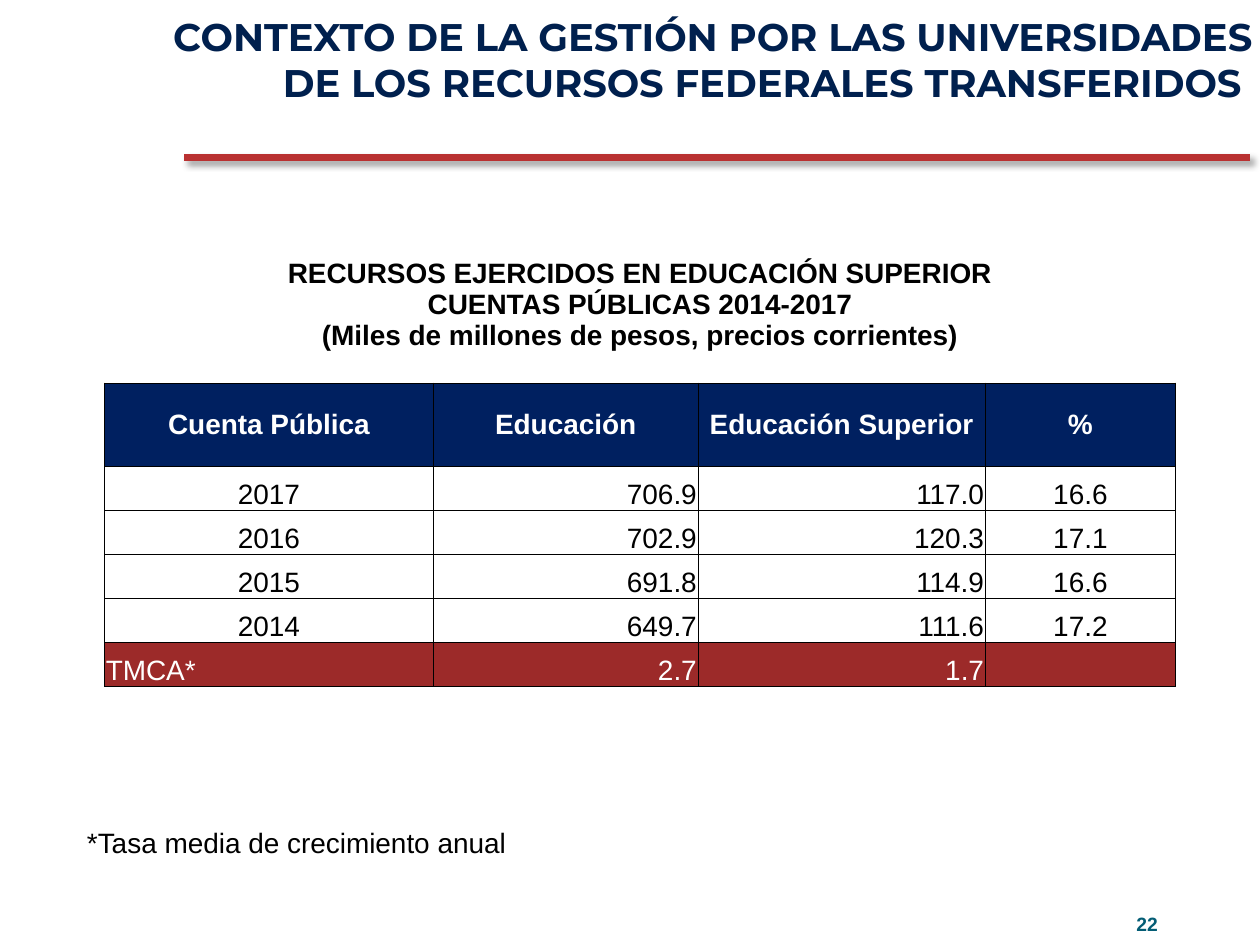
from lxml import etree
from pptx import Presentation
from pptx.dml.color import RGBColor
from pptx.enum import shapes, text
from pptx.oxml import parse_xml
from pptx.oxml.ns import nsdecls, qn
from pptx.util import Inches, Pt

LEFT, CENTER, RIGHT = text.PP_ALIGN.LEFT, text.PP_ALIGN.CENTER, text.PP_ALIGN.RIGHT
TOP, MIDDLE, BOTTOM = text.MSO_ANCHOR.TOP, text.MSO_ANCHOR.MIDDLE, text.MSO_ANCHOR.BOTTOM
NO_STYLE = "{2D5ABB26-0587-4C30-8999-92F81FD0307C}"

TITLE = "CONTEXTO DE LA GESTIÓN POR LAS UNIVERSIDADES DE LOS RECURSOS FEDERALES TRANSFERIDOS "
CAPTION = ("RECURSOS EJERCIDOS EN EDUCACIÓN SUPERIOR\vCUENTAS PÚBLICAS 2014-2017\v"
           "(Miles de millones de pesos, precios corrientes)")
HEADERS = ["Cuenta Pública", "Educación", "Educación Superior", "%"]
ACCOUNTS = [
    ["2017", "706.9", "117.0", "16.6"],
    ["2016", "702.9", "120.3", "17.1"],
    ["2015", "691.8", "114.9", "16.6"],
    ["2014", "649.7", "111.6", "17.2"],
]
GROWTH = ["TMCA*", "2.7", "1.7", ""]


def rgb(value):
    return RGBColor.from_string(value)


def write(tf, content, size=16, font="Arial", color="000000", bold=False,
          align=LEFT, indent=(0, 0)):
    tf.word_wrap = True
    p = tf.paragraphs[0]
    p.text = content
    p.alignment = align
    p.space_before = Pt(0)
    p.line_spacing = 1.0
    pPr = p._p.get_or_add_pPr()
    pPr.set("marL", str(Inches(indent[0])))
    pPr.set("indent", str(Inches(indent[1])))
    etree.SubElement(pPr, qn("a:buNone"))
    for item in [p, *p.runs]:
        item.font.size = Pt(size)
        item.font.name = font
        item.font.bold = bold
        item.font.color.rgb = rgb(color)


def place(sp, x, y, w, h):
    sp.left, sp.top, sp.width, sp.height = (Inches(v) for v in (x, y, w, h))


def add_heading(s, x, y, w, h):
    sp = s.shapes.title
    place(sp, x, y, w, h)
    sp.text_frame.vertical_anchor = TOP
    write(sp.text_frame, TITLE, size=22, font="Montserrat", color="00204E",
          bold=True, align=RIGHT, indent=(0.59, -0.3))


def add_rule(s, x, y, w):
    ln = s.shapes.add_connector(shapes.MSO_CONNECTOR.STRAIGHT, Inches(x + w), Inches(y),
                                Inches(x), Inches(y))
    ln.line.color.rgb = rgb("B93131")
    ln.line.width = Pt(3.5)
    ln._element.spPr.append(parse_xml(
        f'<a:effectLst {nsdecls("a")}><a:outerShdw blurRad="{Pt(4)}" dist="{Pt(3)}" '
        'dir="2700000" algn="tl" rotWithShape="0"><a:srgbClr val="000000">'
        '<a:alpha val="40000"/></a:srgbClr></a:outerShdw></a:effectLst>'))


def style_cell(cell, content, sides="LRTB", fill=None, anchor=BOTTOM, gap=0, **fmt):
    cell.margin_left = cell.margin_right = cell.margin_top = Inches(0.01)
    cell.margin_bottom = Inches(gap)
    cell.vertical_anchor = anchor
    tcPr = cell._tc.get_or_add_tcPr()
    for side in sides:
        tcPr.append(parse_xml(
            f'<a:ln{side} {nsdecls("a")} w="{Pt(0.5)}"><a:solidFill>'
            f'<a:srgbClr val="000000"/></a:solidFill></a:ln{side}>'))
    if fill:
        cell.fill.solid()
        cell.fill.fore_color.rgb = rgb(fill)
    else:
        cell.fill.background()
    write(cell.text_frame, content, **fmt)


def add_accounts_table(s, x, y, w, h):
    widths = [2.61, 2.1, 2.28, 1.51]
    heights = [1.18, 0.66] + [0.35] * 6
    aligns = [CENTER, RIGHT, RIGHT, CENTER]
    frame = s.shapes.add_table(len(heights), len(widths), Inches(x), Inches(y),
                               Inches(w), Inches(h))
    tbl = frame.table
    tbl.first_row = tbl.horz_banding = False
    tbl._tbl.tblPr.find(qn("a:tableStyleId")).text = NO_STYLE
    for col, width in zip(tbl.columns, widths):
        col.width = Inches(width)
    for row, height in zip(tbl.rows, heights):
        row.height = Inches(height)

    last = len(heights) - 1
    for c in range(len(widths)):
        style_cell(tbl.cell(0, c), CAPTION if c == 0 else "", sides="B", gap=0.25,
                   bold=True, align=CENTER)
        style_cell(tbl.cell(1, c), HEADERS[c], fill="002060", anchor=MIDDLE,
                   color="FFFFFF", bold=True, align=CENTER)
        for r, account in enumerate(ACCOUNTS, 2):
            style_cell(tbl.cell(r, c), account[c], align=aligns[c])
        style_cell(tbl.cell(last - 1, c), GROWTH[c], fill="9C2A29", color="FFFFFF",
                   align=aligns[c] if c else LEFT)
        style_cell(tbl.cell(last, c), "", sides="T")
    for r in (0, last):
        tbl.cell(r, 0).merge(tbl.cell(r, len(widths) - 1))


def add_footnote(s, x, y, w, h):
    sp = s.placeholders[1]
    place(sp, x, y, w, h)
    write(sp.text_frame, "*Tasa media de crecimiento anual")


def add_page_number(s, x, y, w, h):
    sp = s.shapes.add_textbox(Inches(x), Inches(y), Inches(w), Inches(h))
    write(sp.text_frame, "22", size=11, color="045D75", bold=True)


def main():
    prs = Presentation()
    prs.slide_width, prs.slide_height = Inches(10), Inches(7.5)
    s = prs.slides.add_slide(prs.slide_layouts[1])
    add_page_number(s, 8.92, 7.19, 1.01, 0.31)
    add_heading(s, 0.75, 0.05, 9.29, 1.21)
    add_rule(s, 1.46, 1.25, 8.46)
    add_accounts_table(s, 0.83, 1.86, 8.5, 3.94)
    add_footnote(s, 0.59, 6.5, 9, 0.48)
    prs.save("out.pptx")


if __name__ == "__main__":
    main()
